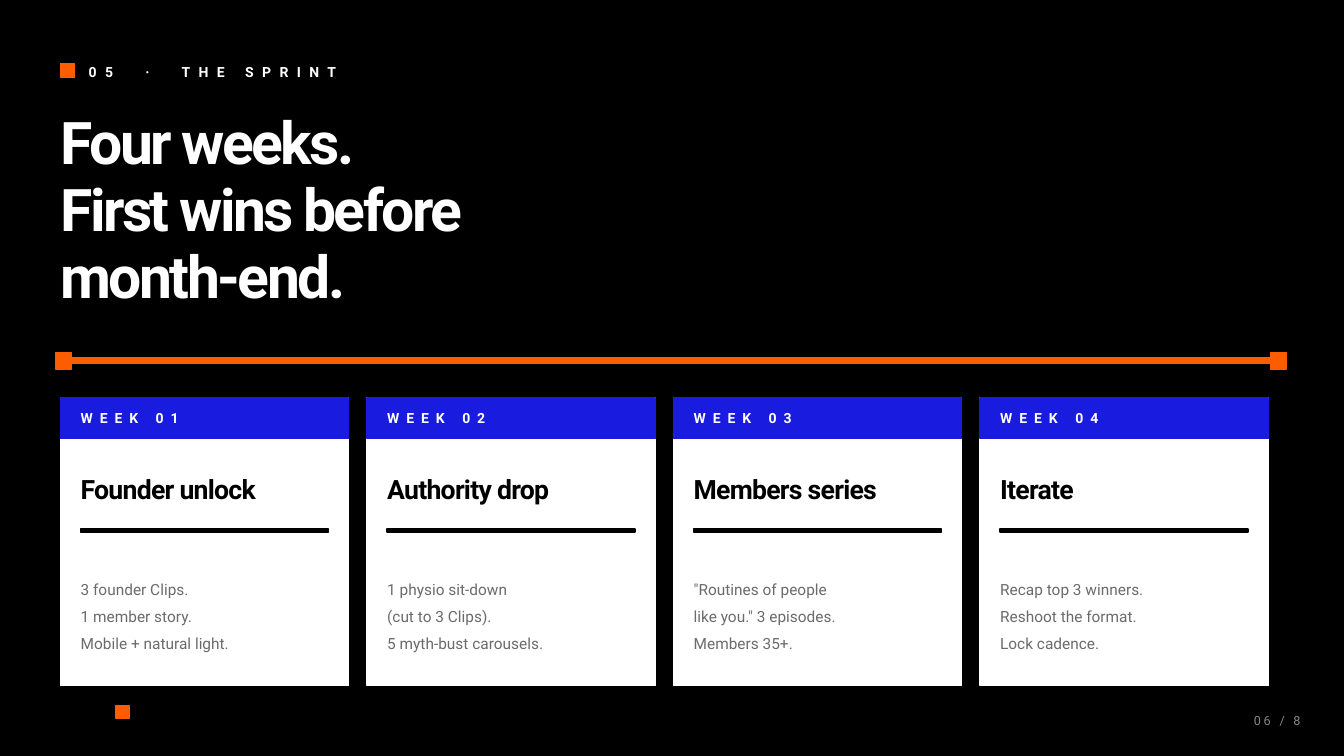
from dataclasses import dataclass

import pptx
import pptx.dml.color
import pptx.enum.shapes
import pptx.enum.text
import pptx.util
from pptx.util import Inches

ANCHOR = pptx.enum.text.MSO_ANCHOR
ALIGN = pptx.enum.text.PP_ALIGN


@dataclass(frozen=True)
class TextStyle:
    size: float
    color: str
    bold: bool = True
    tracking: float = 0
    line_spacing: float = 1.0
    anchor: ANCHOR = ANCHOR.MIDDLE
    align: ALIGN = ALIGN.LEFT


@dataclass(frozen=True)
class Theme:
    font: str = "Roboto"
    black: str = "000000"
    white: str = "FFFFFF"
    orange: str = "FC5D01"
    blue: str = "191BDF"
    kicker: TextStyle = TextStyle(10, "FFFFFF", tracking=6)
    title: TextStyle = TextStyle(42, "FFFFFF", tracking=-1.8, line_spacing=0.95,
                                 anchor=ANCHOR.TOP)
    week: TextStyle = TextStyle(10, "FFFFFF", tracking=5)
    heading: TextStyle = TextStyle(19, "000000", tracking=-0.5)
    body: TextStyle = TextStyle(11, "6B6B6B", bold=False, line_spacing=1.45)
    folio: TextStyle = TextStyle(9, "888888", bold=False, tracking=2,
                                 align=ALIGN.RIGHT)


@dataclass(frozen=True)
class Area:
    left: float
    top: float
    width: float
    height: float


@dataclass(frozen=True)
class Week:
    heading: str
    lines: tuple[str, ...]


THEME = Theme()
WEEKS = (
    Week("Founder unlock",
         ("3 founder Clips.", "1 member story.", "Mobile + natural light.")),
    Week("Authority drop",
         ("1 physio sit-down", "(cut to 3 Clips).", "5 myth-bust carousels.")),
    Week("Members series",
         ('"Routines of people', 'like you." 3 episodes.', "Members 35+.")),
    Week("Iterate",
         ("Recap top 3 winners.", "Reshoot the format.", "Lock cadence.")),
)
MARGIN = 0.6
CARD_TOP, CARD_WIDTH, CARD_HEIGHT, CARD_GAP = 3.95, 2.86, 2.85, 0.18
CARD_PADDING, BAND_HEIGHT = 0.2, 0.4
KICKER_GAP = 14.5  # tracking that widens the spaces around the dot


def rgb(color: str) -> pptx.dml.color.RGBColor:
    return pptx.dml.color.RGBColor.from_string(color)


def place(shape, area: Area) -> None:
    shape.left, shape.top = Inches(area.left), Inches(area.top)
    shape.width, shape.height = Inches(area.width), Inches(area.height)


def add_block(page, area: Area, color: str) -> None:
    block = page.shapes.add_shape(
        pptx.enum.shapes.MSO_SHAPE.RECTANGLE, Inches(area.left),
        Inches(area.top), Inches(area.width), Inches(area.height))
    block.shadow.inherit = False
    block.fill.solid()
    block.fill.fore_color.rgb = rgb(color)
    block.line.color.rgb = rgb(color)
    block.line.width = pptx.util.Pt(1)


def add_span(para, text: str, tracking: float) -> None:
    span = para.add_run()
    span.text = text
    span._r.get_or_add_rPr().set("spc", str(round(tracking * 100)))


def format_para(para, style: TextStyle) -> None:
    para.alignment = style.align
    para.line_spacing = style.line_spacing
    para.font.name = THEME.font
    para.font.size = pptx.util.Pt(style.size)
    para.font.bold = style.bold
    para.font.color.rgb = rgb(style.color)


def write(box, lines: tuple[str, ...], style: TextStyle) -> None:
    frame = box.text_frame
    frame.word_wrap = True
    frame.auto_size = pptx.enum.text.MSO_AUTO_SIZE.NONE
    frame.vertical_anchor = style.anchor
    frame.margin_left = frame.margin_right = 0
    frame.margin_top = frame.margin_bottom = 0
    for index, line in enumerate(lines):
        para = frame.add_paragraph() if index else frame.paragraphs[0]
        format_para(para, style)
        if line:
            add_span(para, line, style.tracking)


def add_text(page, area: Area, style: TextStyle, *lines: str):
    box = page.shapes.add_textbox(0, 0, 0, 0)
    place(box, area)
    write(box, lines, style)
    return box


def add_kicker(page) -> None:
    add_block(page, Area(MARGIN, 0.63, 0.14, 0.14), THEME.orange)
    box = add_text(page, Area(0.88, 0.55, 8, 0.32), THEME.kicker, "")
    para = box.text_frame.paragraphs[0]
    for text in ("05", " ", "·", " ", "THE SPRINT"):
        add_span(para, text, KICKER_GAP if text == " " else THEME.kicker.tracking)


def add_timeline(page) -> None:
    add_block(page, Area(MARGIN, 3.55, 12.1, 0.05), THEME.orange)
    for left in (0.55, 12.6):
        add_block(page, Area(left, 3.5, 0.16, 0.16), THEME.orange)


def add_card(page, index: int, week: Week) -> None:
    left = MARGIN + index * (CARD_WIDTH + CARD_GAP)
    inner = left + CARD_PADDING
    width = CARD_WIDTH - 2 * CARD_PADDING
    add_block(page, Area(left, CARD_TOP, CARD_WIDTH, CARD_HEIGHT), THEME.white)
    add_block(page, Area(left, CARD_TOP, CARD_WIDTH, BAND_HEIGHT), THEME.blue)
    add_text(page, Area(inner, CARD_TOP, width, BAND_HEIGHT), THEME.week,
             f"WEEK {index + 1:02}")
    add_text(page, Area(inner, 4.55, width, 0.6), THEME.heading, week.heading)
    add_block(page, Area(inner, 5.25, width, 0.03), THEME.black)
    add_text(page, Area(inner, 5.4, width, 1.35), THEME.body, *week.lines)


def add_footer(page) -> None:
    add_block(page, Area(1.15, 7, 0.13, 0.13), THEME.orange)
    add_text(page, Area(11.8, 7, 1.1, 0.3), THEME.folio, "06 / 8")


def main() -> None:
    # Deck and background
    deck = pptx.Presentation()
    deck.slide_width, deck.slide_height = Inches(13.33), Inches(7.5)
    page = deck.slides.add_slide(deck.slide_layouts.get_by_name("Title Only"))
    page.background.fill.solid()
    page.background.fill.fore_color.rgb = rgb(THEME.black)

    # Heading
    add_kicker(page)
    place(page.shapes.title, Area(MARGIN, 1.1, 12.1, 2))
    write(page.shapes.title,
          ("Four weeks.", "First wins before", "month-end."), THEME.title)

    # Four-week plan
    add_timeline(page)
    for index, week in enumerate(WEEKS):
        add_card(page, index, week)

    # Footer
    add_footer(page)
    deck.save("out.pptx")


if __name__ == "__main__":
    main()
